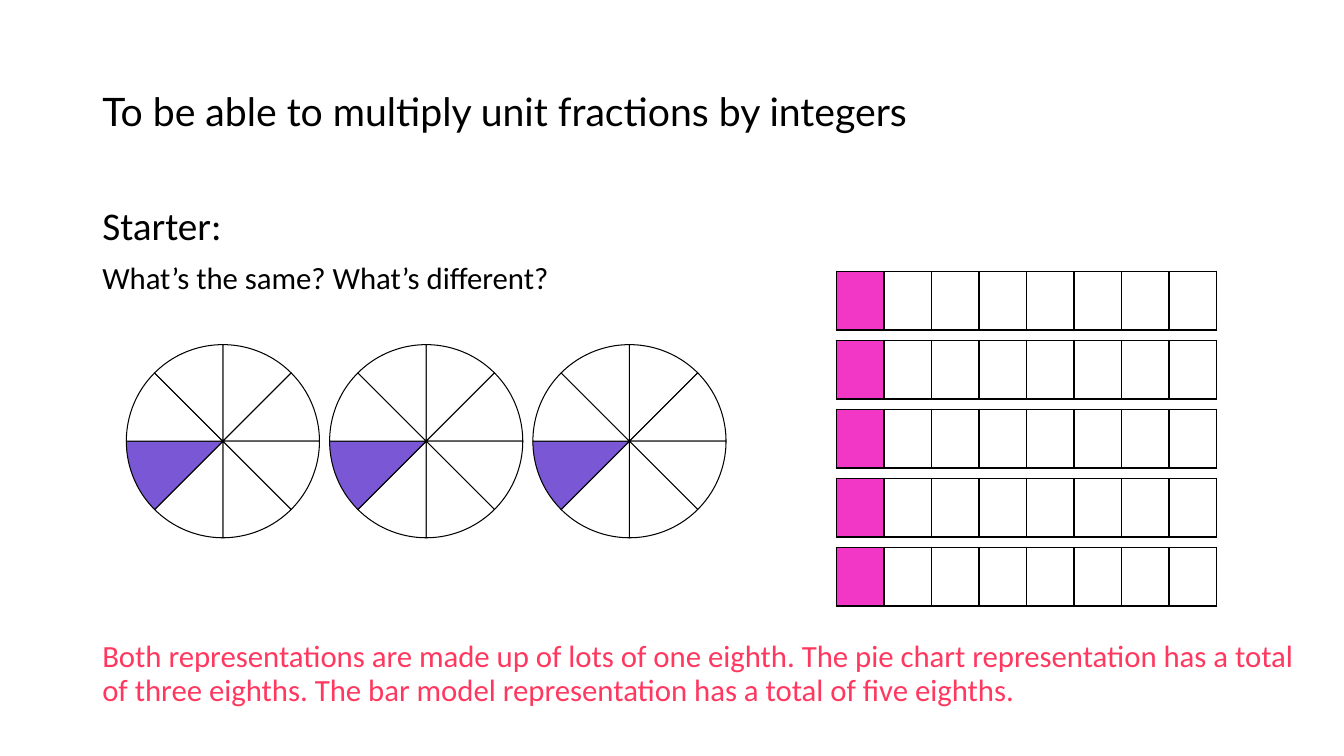
from lxml.etree import fromstring
from pptx import Presentation
from pptx.chart.data import CategoryChartData
from pptx.dml.color import RGBColor
from pptx.enum.chart import XL_CHART_TYPE as ChartType
from pptx.enum.text import MSO_ANCHOR as Anchor
from pptx.oxml.ns import nsdecls
from pptx.util import Pt

BLACK, WHITE = "000000", "FFFFFF"
PURPLE, PINK, RED = "7957D5", "F237C7", "FF3860"
PARTS = 8


def colour(value):
    return RGBColor.from_string(value)


def paint(fill, value):
    fill.solid()
    fill.fore_color.rgb = colour(value)


def add_text(slide, box, lines, font="Calibri", ink=BLACK, anchor=Anchor.TOP):
    frame = slide.shapes.add_textbox(*map(Pt, box)).text_frame
    frame.word_wrap = True
    frame.vertical_anchor = anchor
    for index, (text, size) in enumerate(lines):
        para = frame.add_paragraph() if index else frame.paragraphs[0]
        para.text = text
        para.line_spacing = 0.9
        para.space_before = Pt(10 if index else 0)
        para.font.name = font
        para.font.size = Pt(size)
        para.font.color.rgb = colour(ink)


def add_pie(slide, box, shaded):
    data = CategoryChartData()
    data.categories = [str(part) for part in range(1, PARTS + 1)]
    data.add_series("Series 1", [12] * PARTS)
    chart = slide.shapes.add_chart(ChartType.PIE, *map(Pt, box), data).chart
    chart.has_legend = False
    chart.has_title = False
    chart.font.name = "Calibri"
    chart.font.size = Pt(10)
    chart.font.color.rgb = colour(BLACK)
    plot = chart.plots[0]
    plot.vary_by_categories = False
    for index in range(PARTS):
        style = plot.series[0].points[index].format
        paint(style.fill, PURPLE if index == shaded else WHITE)
        style.line.color.rgb = colour(BLACK)
        style.line.width = Pt(0.75)

    clear = fromstring(f'<c:spPr {nsdecls("c", "a")}><a:noFill/><a:ln><a:noFill/></a:ln></c:spPr>')
    chart.element.find("{*}chart").addnext(clear)
    area = chart.element.find("{*}chart/{*}plotArea")
    for old in area.findall("{*}layout"):
        area.remove(old)
    places = "".join(f'<c:{name} val="{value}"/>' for name, value in
                     [("x", 0.13), ("y", 0.06), ("w", 0.74), ("h", 0.88)])
    area.insert(0, fromstring(
        f'<c:layout {nsdecls("c")}><c:manualLayout><c:layoutTarget val="inner"/>'
        f'<c:xMode val="edge"/><c:yMode val="edge"/>{places}</c:manualLayout></c:layout>'))


def add_pies(slide, box, count, pitch):
    left, top, width, height = box
    for index in range(count):
        add_pie(slide, (left + index * pitch, top, width, height), shaded=5)


def add_borders(cell):
    properties = cell._tc.get_or_add_tcPr()
    for side in ("lnL", "lnR", "lnT", "lnB"):
        properties.append(fromstring(
            f'<a:{side} {nsdecls("a")} w="{Pt(1)}"><a:solidFill>'
            f'<a:srgbClr val="{BLACK}"/></a:solidFill></a:{side}>'))


def add_bar(slide, box):
    table = slide.shapes.add_table(1, PARTS, *map(Pt, box)).table
    table.first_row = False
    table.horz_banding = False
    for index, cell in enumerate(table.iter_cells()):
        add_borders(cell)
        paint(cell.fill, WHITE if index else PINK)


def add_bars(slide, box, count, pitch):
    left, top, width, height = box
    for index in range(count):
        add_bar(slide, (left, top + index * pitch, width, height))


def build_starter(deck):
    slide = deck.slides.add_slide(deck.slide_layouts[6])
    add_text(slide, (66, 28.8, 691, 104.4),
             [("To be able to multiply unit fractions by integers", 28)],
             font="Lato", anchor=Anchor.MIDDLE)
    add_text(slide, (66, 144, 520, 70),
             [("Starter:", 28), ("What’s the same? What’s different?", 22)])
    add_text(slide, (66, 454.5, 869, 56),
             [("Both representations are made up of lots of one eighth. "
               "The pie chart representation has a total of three eighths. "
               "The bar model representation has a total of five eighths.", 22)], ink=RED)
    add_pies(slide, (66, 236, 186.5, 158.4), count=3, pitch=145.2)
    add_bars(slide, (597.5, 193.7, 271.5, 42), count=5, pitch=49.3)


def main():
    deck = Presentation()
    deck.slide_width, deck.slide_height = Pt(960), Pt(540)
    build_starter(deck)
    deck.save("out.pptx")


if __name__ == "__main__":
    main()
